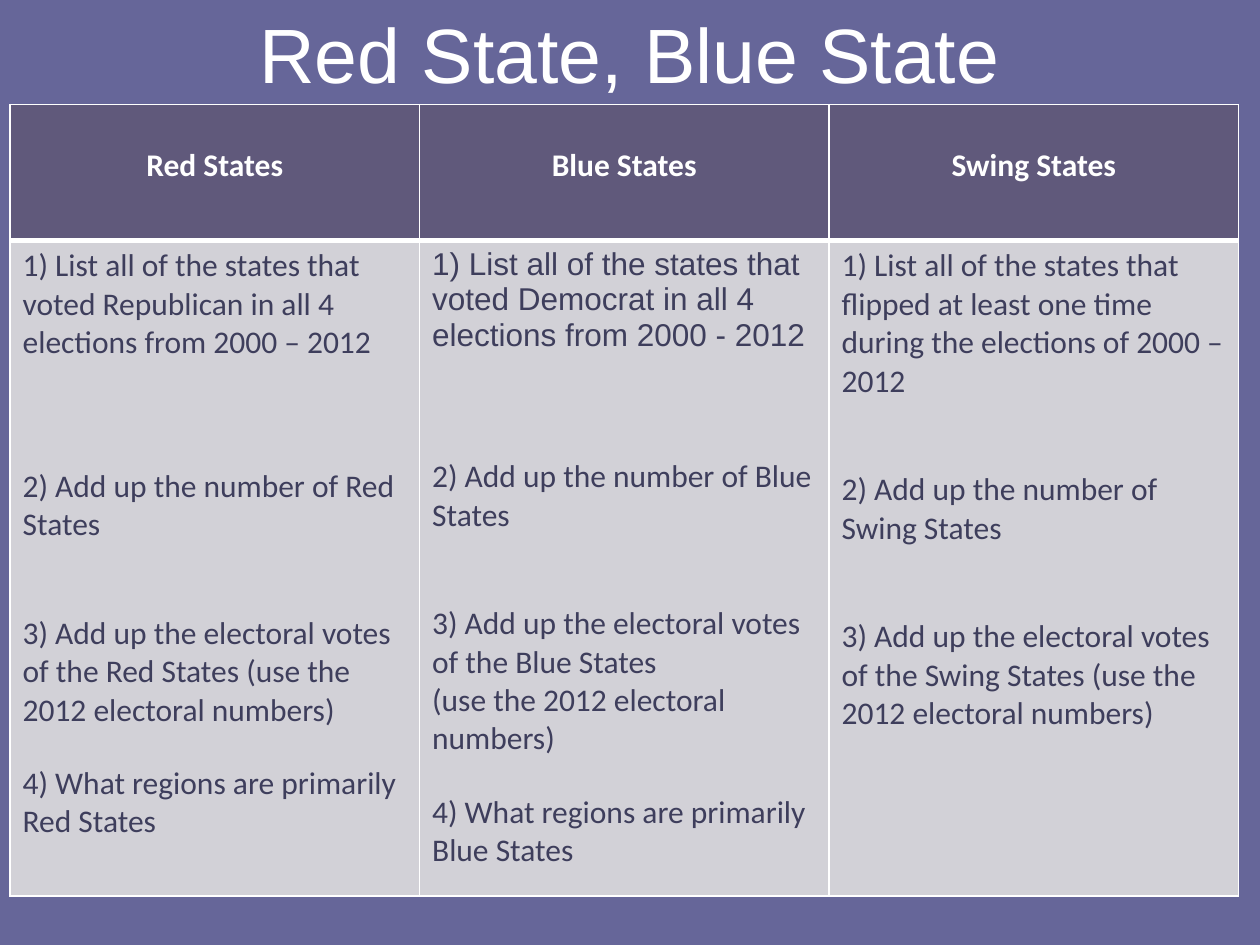
import pptx
import pptx.util
import pptx.dml.color
import pptx.enum.text
import pptx.oxml.ns
from lxml import etree
from pptx.util import Inches

WHITE, HEADER, BODY, INK = "FFFFFF", "60597B", "D2D1D7", "3E3E5C"


def color(value):
    return pptx.dml.color.RGBColor.from_string(value)


def set_borders(cell, widths):
    """Draw white borders, widths in points for left, right, top, bottom."""
    tc_pr = cell._tc.get_or_add_tcPr()
    for i, (side, width) in enumerate(zip("LRTB", widths)):
        ln = etree.Element(pptx.oxml.ns.qn(f"a:ln{side}"), w=str(pptx.util.Pt(width)))
        fill = etree.SubElement(ln, pptx.oxml.ns.qn("a:solidFill"))
        etree.SubElement(fill, pptx.oxml.ns.qn("a:srgbClr"), val=WHITE)
        tc_pr.insert(i, ln)


prs = pptx.Presentation()
prs.slide_width, prs.slide_height = Inches(10), Inches(7.5)
s = prs.slides.add_slide(prs.slide_layouts[5])
s.background.fill.solid()
s.background.fill.fore_color.rgb = color("666699")

# Title
title = s.shapes.title
title.left, title.top, title.width, title.height = 0, 0, Inches(10), Inches(0.83)
tf = title.text_frame
tf.text = "Red State, Blue State"
tf.vertical_anchor = pptx.enum.text.MSO_ANCHOR.MIDDLE
p = tf.paragraphs[0]
p.alignment = pptx.enum.text.PP_ALIGN.CENTER
p.font.size, p.font.name = pptx.util.Pt(44), "Arial"
p.font.color.rgb = color(WHITE)

# Columns: heading, then tasks as (space before in points, font, text)
columns = [
    ("Red States", [
        (0, "Calibri", "1) List all of the states that voted Republican in all 4 elections from 2000 – 2012"),
        (60, "Calibri", "2) Add up the number of Red States"),
        (40, "Calibri", "3) Add up the electoral votes of the Red States (use the 2012 electoral numbers)"),
        (20, "Calibri", "4) What regions are primarily Red States"),
    ]),
    ("Blue States", [
        (0, "Arial", "1) List all of the states that voted Democrat in all 4 elections from 2000 - 2012"),
        (60, "Calibri", "2) Add up the number of Blue States"),
        (40, "Calibri", "3) Add up the electoral votes of the Blue States"),
        (0, "Calibri", "(use the 2012 electoral numbers)"),
        (20, "Calibri", "4) What regions are primarily Blue States"),
    ]),
    ("Swing States", [
        (0, "Calibri", "1) List all of the states that flipped at least one time during the elections of 2000 – 2012"),
        (40, "Calibri", "2) Add up the number of Swing States"),
        (40, "Calibri", "3) Add up the electoral votes of the Swing States (use the 2012 electoral numbers)"),
    ]),
]

# Table
table = s.shapes.add_table(2, len(columns), Inches(0.08), Inches(0.83),
                           Inches(9.75), Inches(6.28)).table
table.horz_banding = False
table.rows[0].height, table.rows[1].height = Inches(1.08), Inches(5.2)

for col, (heading, tasks) in enumerate(columns):
    table.columns[col].width = Inches(3.25)

    # Heading cell
    head = table.cell(0, col)
    head.fill.solid()
    head.fill.fore_color.rgb = color(HEADER)
    head.margin_top = Inches(0.33)
    set_borders(head, (1, 1, 1, 3))
    p = head.text_frame.paragraphs[0]
    p.text = heading
    p.alignment = pptx.enum.text.PP_ALIGN.CENTER
    p.font.size, p.font.name, p.font.bold = pptx.util.Pt(18), "Calibri", True
    p.font.color.rgb = color(WHITE)

    # Task cell
    body = table.cell(1, col)
    body.fill.solid()
    body.fill.fore_color.rgb = color(BODY)
    set_borders(body, (1, 1, 3, 1))
    tf = body.text_frame
    for i, (space, font, text) in enumerate(tasks):
        p = tf.add_paragraph() if i else tf.paragraphs[0]
        p.text = text
        p.space_before = pptx.util.Pt(space)
        p.font.size, p.font.name, p.font.bold = pptx.util.Pt(18), font, False
        p.font.color.rgb = color(INK)

prs.save("out.pptx")
